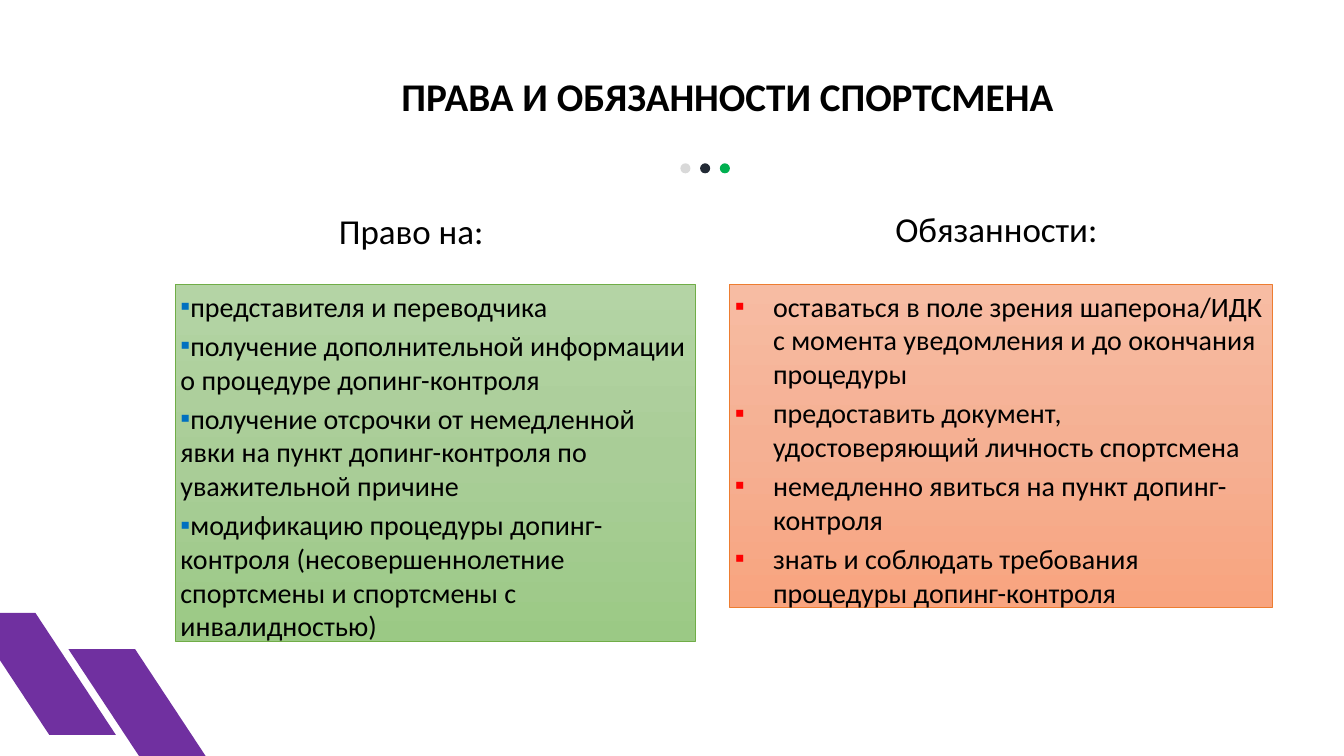
from copy import deepcopy
from dataclasses import dataclass

from lxml.etree import SubElement
from pptx import Presentation
from pptx.dml.color import RGBColor
from pptx.enum.shapes import MSO_SHAPE
from pptx.enum.text import MSO_ANCHOR, MSO_AUTO_SIZE, PP_ALIGN
from pptx.oxml.ns import qn
from pptx.util import Emu, Inches, Pt

SLIDE_WIDTH, SLIDE_HEIGHT = Inches(13.333), Inches(7.5)
COLUMN, ROW = SLIDE_WIDTH / 160, SLIDE_HEIGHT / 90
FONT = "Calibri"
INSET = Inches(0.05)
HANGING_INDENT = Inches(0.38)
COMPARISON_LAYOUT = 4

BLACK = RGBColor(0x00, 0x00, 0x00)
BLUE = RGBColor(0x00, 0x70, 0xC0)
RED = RGBColor(0xFF, 0x00, 0x00)
PURPLE = RGBColor(0x70, 0x30, 0xA0)
GREEN_EDGE = RGBColor(0x70, 0xAD, 0x47)
ORANGE_EDGE = RGBColor(0xED, 0x7D, 0x31)
GREEN_FADE = (RGBColor(0xB4, 0xD4, 0xA5), RGBColor(0xA9, 0xCD, 0x97), RGBColor(0x9B, 0xC9, 0x85))
ORANGE_FADE = (RGBColor(0xF7, 0xBC, 0xA3), RGBColor(0xF5, 0xB0, 0x93), RGBColor(0xF8, 0xA4, 0x7F))
DOT_COLORS = (RGBColor(0xD9, 0xD9, 0xD9), RGBColor(0x22, 0x2A, 0x35), RGBColor(0x00, 0xB0, 0x50))


@dataclass(frozen=True)
class Box:
    """A rectangle in grid columns and rows."""
    left: float
    top: float
    width: float
    height: float

    def lengths(self) -> tuple:
        return (Emu(round(self.left * COLUMN)), Emu(round(self.top * ROW)),
                Emu(round(self.width * COLUMN)), Emu(round(self.height * ROW)))


@dataclass(frozen=True)
class Panel:
    heading: str
    heading_box: Box
    heading_index: int
    items: tuple
    items_box: Box
    items_index: int
    fade: tuple
    edge: RGBColor
    bullet: RGBColor
    indent: int


PANELS = (
    Panel("Право на:", Box(36.36, 24.72, 25.2, 5.4), 1,
          ("представителя и переводчика",
           "получение дополнительной информации о процедуре допинг-контроля",
           "получение отсрочки от немедленной явки на пункт допинг-контроля по уважительной причине",
           "модификацию процедуры допинг-контроля (несовершеннолетние спортсмены "
           "и спортсмены с инвалидностью)"),
          Box(20.88, 33.84, 61.92, 43.68), 2, GREEN_FADE, GREEN_EDGE, BLUE, 0),
    Panel("Обязанности:", Box(104.28, 24.48, 28.68, 5.4), 3,
          ("оставаться в поле зрения шаперона/ИДК с момента уведомления и до окончания процедуры",
           "предоставить документ, удостоверяющий личность спортсмена",
           "немедленно явиться на пункт допинг-контроля",
           "знать и соблюдать требования процедуры допинг-контроля"),
          Box(86.88, 33.84, 64.56, 39.6), 4, ORANGE_FADE, ORANGE_EDGE, RED, HANGING_INDENT),
)
BANDS = (Box(8.16, 77.28, 17.52, 14.52), Box(-3.72, 72.96, 17.52, 14.52))


def place(shape, box: Box) -> None:
    shape.left, shape.top, shape.width, shape.height = box.lengths()


def set_bullet(paragraph, color: RGBColor | None, indent: int) -> None:
    """Give the paragraph a square bullet, or none when color is None."""
    properties = paragraph._p.get_or_add_pPr()
    properties.set("marL", str(indent))
    properties.set("indent", str(-indent))
    if color is None:
        SubElement(properties, qn("a:buNone"))
        return
    bullet_color = SubElement(properties, qn("a:buClr"))
    SubElement(bullet_color, qn("a:srgbClr"), val=str(color))
    SubElement(properties, qn("a:buChar"), char="▪")


def write_text(shape, *texts: str, size: float, bold: bool = False, wrap: bool = True,
               align: PP_ALIGN = PP_ALIGN.LEFT, anchor: MSO_ANCHOR = MSO_ANCHOR.TOP,
               space_before: float = 0, bullet: RGBColor | None = None, indent: int = 0) -> None:
    frame = shape.text_frame
    frame.margin_left = frame.margin_right = frame.margin_top = frame.margin_bottom = INSET
    frame.word_wrap = wrap
    frame.auto_size = MSO_AUTO_SIZE.SHAPE_TO_FIT_TEXT
    frame.vertical_anchor = anchor
    frame.text = "\n".join(texts)
    for paragraph in frame.paragraphs:
        paragraph.alignment = align
        paragraph.line_spacing = 1.0
        paragraph.space_before = Pt(space_before)
        set_bullet(paragraph, bullet, indent)
        font = paragraph.runs[0].font
        font.name, font.size, font.bold = FONT, Pt(size), bold
        font.color.rgb = BLACK


def fill_with_fade(shape, colors: tuple) -> None:
    """Fill from top to bottom through three evenly spaced colours."""
    shape.fill.gradient()
    shape.fill.gradient_angle = 270
    stop_list = shape._element.spPr.find(".//" + qn("a:gsLst"))
    stop_list.insert(1, deepcopy(stop_list[0]))
    for number, (stop, color) in enumerate(zip(shape.fill.gradient_stops, colors)):
        stop.position = number / 2
        stop.color.rgb = color


def add_panel(slide, panel: Panel) -> None:
    heading = slide.placeholders[panel.heading_index]
    place(heading, panel.heading_box)
    write_text(heading, panel.heading, size=25, align=PP_ALIGN.CENTER,
               anchor=MSO_ANCHOR.MIDDLE, space_before=4, indent=HANGING_INDENT)
    body = slide.placeholders[panel.items_index]
    place(body, panel.items_box)
    fill_with_fade(body, panel.fade)
    body.line.color.rgb = panel.edge
    body.line.width = Pt(0.5)
    write_text(body, *panel.items, size=20, space_before=4,
               bullet=panel.bullet, indent=panel.indent)


def add_plain_shape(slide, kind: MSO_SHAPE, box: Box, color: RGBColor):
    shape = slide.shapes.add_shape(kind, *box.lengths())
    shape.shadow.inherit = False
    shape.fill.solid()
    shape.fill.fore_color.rgb = color
    shape.line.fill.background()
    return shape


def main() -> None:
    presentation = Presentation()
    presentation.slide_width, presentation.slide_height = SLIDE_WIDTH, SLIDE_HEIGHT
    slide = presentation.slides.add_slide(presentation.slide_layouts[COMPARISON_LAYOUT])

    title = slide.shapes.title
    place(title, Box(47.04, 8.04, 79.08, 5.88))
    write_text(title, "ПРАВА И ОБЯЗАННОСТИ СПОРТСМЕНА", size=28, bold=True, wrap=False,
               align=PP_ALIGN.CENTER)
    for panel in PANELS:
        add_panel(slide, panel)
    for number, color in enumerate(DOT_COLORS):
        add_plain_shape(slide, MSO_SHAPE.OVAL, Box(81 + 2.35 * number, 19.44, 1.2, 1.2), color)
    for box in BANDS:
        band = add_plain_shape(slide, MSO_SHAPE.PARALLELOGRAM, box, PURPLE)
        band.adjustments[0] = 0.66
        band._element.spPr.xfrm.set("flipH", "1")

    presentation.save("out.pptx")


if __name__ == "__main__":
    main()
